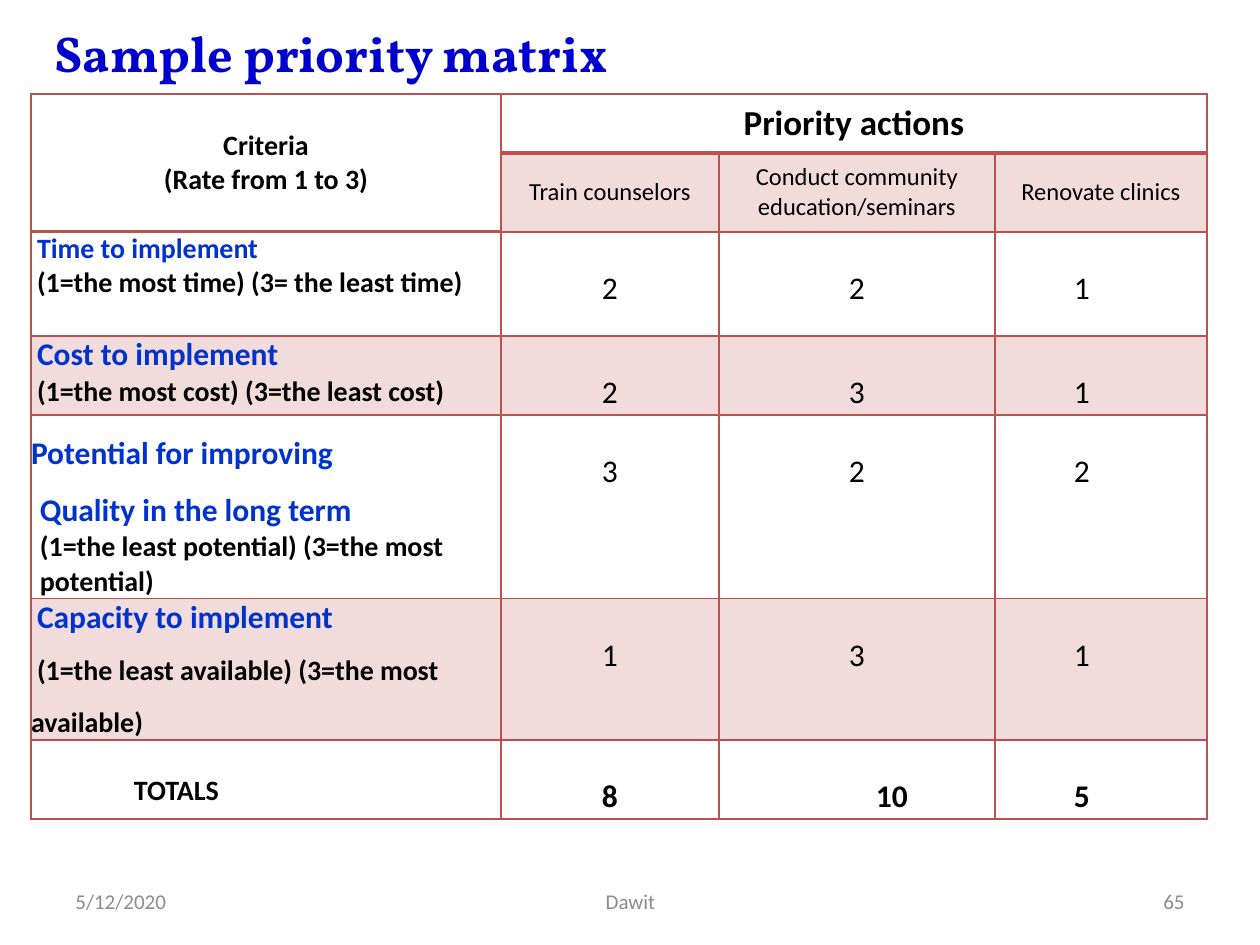
from dataclasses import dataclass
from typing import Any

from lxml import etree
from pptx import Presentation, util as u
from pptx.dml.color import RGBColor
from pptx.enum import text
from pptx.oxml.ns import qn

PX = u.Inches(1) // 126
TITLE_BLUE = RGBColor(0x00, 0x00, 0xCC)
LABEL_BLUE = RGBColor(0x00, 0x33, 0xCC)
BLACK = RGBColor(0x00, 0x00, 0x00)
WHITE = RGBColor(0xFF, 0xFF, 0xFF)
GREY = RGBColor(0x8C, 0x8C, 0x8C)
RED = RGBColor(0xC0, 0x50, 0x4D)
PINK = RGBColor(0xF2, 0xDC, 0xDB)
LEFT, CENTER, RIGHT = text.PP_ALIGN.LEFT, text.PP_ALIGN.CENTER, text.PP_ALIGN.RIGHT
MIDDLE, TOP = text.MSO_ANCHOR.MIDDLE, text.MSO_ANCHOR.TOP


@dataclass
class Line:
    """One paragraph; margin and first_line are indents in px."""
    words: str
    size: float = 16
    color: RGBColor = BLACK
    bold: bool = False
    align: Any = LEFT
    margin: int = 0
    first_line: int = 0
    spacing: float = 1.0
    font: str = "Calibri"


class SlideBuilder:
    def __init__(self, slide):
        self.slide = slide

    def fill_text(self, frame, lines):
        frame.word_wrap = True
        for index, line in enumerate(lines):
            paragraph = frame.paragraphs[0] if index == 0 else frame.add_paragraph()
            paragraph.text = line.words
            paragraph.alignment = line.align
            paragraph.line_spacing = line.spacing
            properties = paragraph._p.get_or_add_pPr()
            properties.set("marL", str(line.margin * PX))
            properties.set("indent", str(line.first_line * PX))
            font = paragraph.font
            font.name, font.size, font.bold = line.font, u.Pt(line.size), line.bold
            font.color.rgb = line.color

    def title(self, box, line):
        shape = self.slide.shapes.title
        shape.left, shape.top, shape.width, shape.height = (value * PX for value in box)
        self.fill_text(shape.text_frame, [line])
        shape.text_frame.auto_size = text.MSO_AUTO_SIZE.NONE
        shape.text_frame.vertical_anchor = MIDDLE

    def text_box(self, box, line):
        shape = self.slide.shapes.add_textbox(*(value * PX for value in box))
        self.fill_text(shape.text_frame, [line])
        shape.text_frame.vertical_anchor = MIDDLE

    def table(self, left, top, columns, rows):
        frame = self.slide.shapes.add_table(
            len(rows), len(columns), left * PX, top * PX,
            sum(columns) * PX, sum(rows) * PX)
        table = frame.table
        table.first_row = table.horz_banding = False
        for column, width in zip(table.columns, columns):
            column.width = width * PX
        for row, height in zip(table.rows, rows):
            row.height = height * PX
        return table

    def borders(self, cell, **widths):
        """Draw the four sides; widths maps L, R, T, B to points."""
        properties = cell._tc.get_or_add_tcPr()
        for side in "LRTB":
            line = etree.SubElement(properties, qn(f"a:ln{side}"),
                                    w=str(u.Pt(widths.get(side, 1))))
            fill = etree.SubElement(line, qn("a:solidFill"))
            etree.SubElement(fill, qn("a:srgbClr"), val=str(RED))

    def cell(self, cell, lines, anchor=TOP, top=0):
        cell.margin_left = cell.margin_right = cell.margin_bottom = 0
        cell.margin_top = top * PX
        cell.vertical_anchor = anchor
        self.fill_text(cell.text_frame, lines)


def label(words, size=18, **style):
    return Line(words, size, LABEL_BLUE, True, **style)


def note(words, **style):
    return Line(words, bold=True, **style)


NUDGE = 6
GAP = 38
CRITERIA = [
    ([label("Time to implement", 16, first_line=NUDGE),
      note("(1=the most time) (3= the least time)", first_line=NUDGE)], "221"),
    ([label("Cost to implement", first_line=NUDGE),
      note("(1=the most cost) (3=the least cost)", first_line=NUDGE)], "231"),
    ([label("Potential for improving", spacing=1.5),
      label("Quality in the long term", spacing=1.5, margin=9),
      note("(1=the least potential) (3=the most potential)", margin=9)], "322"),
    ([label("Capacity to implement", first_line=NUDGE),
      note("(1=the least available) (3=the most available)",
           first_line=NUDGE, spacing=1.5)], "131"),
]
ACTIONS = ["Train counselors", "Conduct community education/seminars",
           "Renovate clinics"]
SCORE_STYLES = [dict(align=CENTER), dict(align=CENTER), dict(margin=79)]
TOTAL_STYLES = [dict(align=CENTER), dict(margin=157), dict(margin=79)]
THICK_BOTTOMS = {(0, 0), (1, 0), (0, 1), (0, 2), (0, 3)}
SHADED_ROWS = {1, 3, 5}


def add_matrix(builder):
    columns = [470, 218, 276, 212]
    rows = [59, 79, 104, 79, 183, 141, 79]
    table = builder.table(31, 94, columns, rows)
    table.cell(0, 0).merge(table.cell(1, 0))
    table.cell(0, 1).merge(table.cell(0, 3))

    for row in range(len(rows)):
        for column in range(len(columns)):
            cell = table.cell(row, column)
            builder.borders(cell,
                            T=2 if (row - 1, column) in THICK_BOTTOMS else 1,
                            B=2 if (row, column) in THICK_BOTTOMS else 1)
            cell.fill.solid()
            shaded = row in SHADED_ROWS and (row, column) != (1, 0)
            cell.fill.fore_color.rgb = PINK if shaded else WHITE

    builder.cell(table.cell(0, 0), [note("Criteria", align=CENTER),
                                    note("(Rate from 1 to 3)", align=CENTER)], MIDDLE)
    builder.cell(table.cell(0, 1),
                 [Line("Priority actions", 20, bold=True, align=CENTER)], MIDDLE)
    for column, action in enumerate(ACTIONS, 1):
        builder.cell(table.cell(1, column), [Line(action, 14, align=CENTER)], MIDDLE)

    for row, (lines, scores) in enumerate(CRITERIA, 2):
        builder.cell(table.cell(row, 0), lines)
        for column, (score, style) in enumerate(zip(scores, SCORE_STYLES), 1):
            builder.cell(table.cell(row, column), [Line(score, 18, **style)], top=GAP)

    builder.cell(table.cell(6, 0), [note("TOTALS", margin=103)], top=34)
    for column, style in enumerate(TOTAL_STYLES, 1):
        total = sum(int(scores[column - 1]) for _, scores in CRITERIA)
        builder.cell(table.cell(6, column),
                     [Line(str(total), 18, bold=True, **style)], top=GAP)


def main():
    presentation = Presentation()
    presentation.slide_width, presentation.slide_height = u.Inches(10), u.Inches(7.5)
    builder = SlideBuilder(presentation.slides.add_slide(presentation.slide_layouts[5]))
    builder.title((42, 21, 1172, 63),
                  Line("Sample priority matrix", 28.8, TITLE_BLUE, True, font="Vollkorn"))
    add_matrix(builder)
    for left, width, words, align in [(903, 294, "65", RIGHT),
                                      (63, 294, "5/12/2020", LEFT),
                                      (431, 399, "Dawit", CENTER)]:
        builder.text_box((left, 876, width, 50), Line(words, 12, GREY, align=align))
    presentation.save("out.pptx")


if __name__ == "__main__":
    main()
